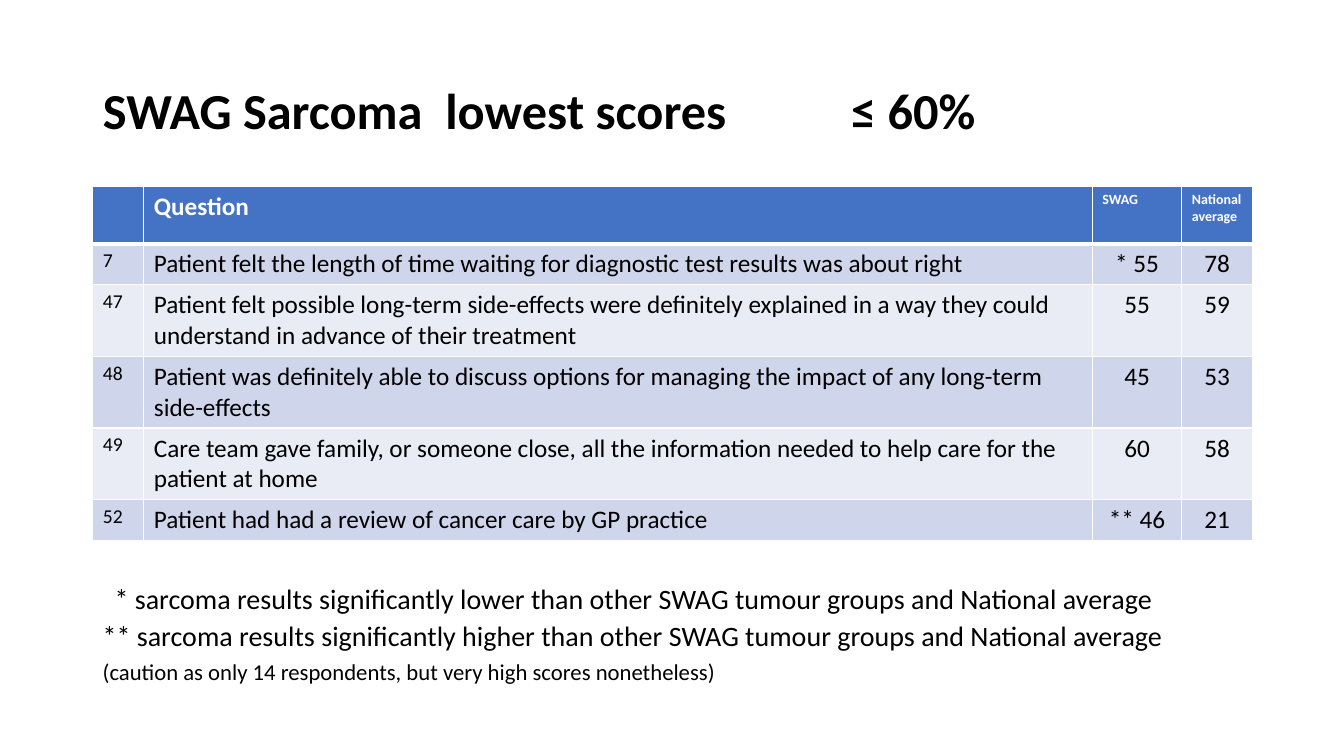
from dataclasses import dataclass

from lxml.etree import SubElement
from pptx import Presentation
from pptx.dml.color import RGBColor
from pptx.enum.text import MSO_ANCHOR, MSO_AUTO_SIZE, PP_ALIGN
from pptx.oxml.ns import qn
from pptx.util import Pt


@dataclass(frozen=True)
class Theme:
    """Colours, font and type sizes of the slide."""
    font: str = "Calibri"
    text: str = "000000"
    white: str = "FFFFFF"
    header: str = "4472C4"
    bands: tuple = ("CFD5EA", "E9EBF5")
    title_size: float = 36
    body_size: float = 18
    number_size: float = 14
    small_header_size: float = 10
    note_size: float = 20
    caution_size: float = 16.2


THEME = Theme()
LEFT, WIDTH = 66.24, 828
COLUMN_WIDTHS = (36.5, 677.5, 64, 50.4)
HEADER_HEIGHT, LINE_HEIGHT, CELL_PADDING = 41, 21.95, 7.2
HEADERS = ("", "Question", "SWAG", "National average")
SCORES = (
    ("7", "Patient felt the length of time waiting for diagnostic test results was about right", "* 55", "78", 1),
    ("47", "Patient felt possible long-term side-effects were definitely explained in a way "
           "they could understand in advance of their treatment", "55", "59", 2),
    ("48", "Patient was definitely able to discuss options for managing the impact of any "
           "long-term side-effects", "45", "53", 2),
    ("49", "Care team gave family, or someone close, all the information needed to help care "
           "for the patient at home", "60", "58", 2),
    ("52", "Patient had had a review of cancer care by GP practice", "** 46", "21", 1),
)
NOTES = (
    ("* sarcoma results significantly lower than other SWAG tumour groups and National average",
     THEME.note_size, 8.5),
    ("** sarcoma results significantly higher than other SWAG tumour groups and National average",
     THEME.note_size, 0),
    ("(caution as only 14 respondents, but very high scores nonetheless)", THEME.caution_size, 0),
)


def set_values(target, values):
    """Set each attribute of target from a dict."""
    for name, value in values.items():
        setattr(target, name, value)


def write_text(paragraph, text, size, color=THEME.text, bold=False, **formats):
    """Fill a paragraph with one formatted text."""
    paragraph.add_run().text = text
    set_values(paragraph, formats)
    for font in (paragraph.font, paragraph.runs[0].font):
        set_values(font, {"name": THEME.font, "size": Pt(size), "bold": bold})
        font.color.rgb = RGBColor.from_string(color)


def add_tab_stop(paragraph, position):
    """Give a paragraph one left tab stop."""
    tabs = SubElement(paragraph._p.get_or_add_pPr(), qn("a:tabLst"))
    SubElement(tabs, qn("a:tab"), pos=str(Pt(position)), algn="l")


def set_borders(cell, **widths):
    """Draw white borders of the given widths around a cell."""
    properties = cell._tc.get_or_add_tcPr()
    for side in "LRTB":
        line = SubElement(properties, qn(f"a:ln{side}"), w=str(Pt(widths.get(side, 1))))
        SubElement(SubElement(line, qn("a:solidFill")), qn("a:srgbClr"), val=THEME.white)


def write_cell(cell, text, size, fill, borders, **formats):
    """Fill, border and label a table cell."""
    set_borders(cell, **borders)
    cell.fill.solid()
    cell.fill.fore_color.rgb = RGBColor.from_string(fill)
    write_text(cell.text_frame.paragraphs[0], text, size, **formats)


def add_title(slide):
    """Place and format the title."""
    title = slide.shapes.title
    set_values(title, {"left": Pt(LEFT), "top": Pt(28.8), "width": Pt(WIDTH), "height": Pt(104.4)})
    set_values(title.text_frame, {"word_wrap": True, "auto_size": MSO_AUTO_SIZE.NONE,
                                  "vertical_anchor": MSO_ANCHOR.MIDDLE})
    paragraph = title.text_frame.paragraphs[0]
    add_tab_stop(paragraph, 534.5)
    write_text(paragraph, "SWAG Sarcoma  lowest scores\t≤ 60%", THEME.title_size, bold=True,
               alignment=PP_ALIGN.LEFT, line_spacing=0.9)


def add_score_table(slide):
    """Add the table of the lowest scores."""
    heights = [HEADER_HEIGHT] + [score[-1] * LINE_HEIGHT + CELL_PADDING for score in SCORES]
    table = slide.shapes.add_table(len(heights), len(COLUMN_WIDTHS), Pt(LEFT), Pt(133.2),
                                   Pt(WIDTH), Pt(sum(heights))).table
    for column, width in zip(table.columns, COLUMN_WIDTHS):
        column.width = Pt(width)
    for row, height in zip(table.rows, heights):
        row.height = Pt(height)
    for index, header in enumerate(HEADERS):
        size = THEME.body_size if index < 2 else THEME.small_header_size
        write_cell(table.cell(0, index), header, size, THEME.header, {"B": 3},
                   color=THEME.white, bold=True)
    for row_index, score in enumerate(SCORES, start=1):
        fill = THEME.bands[(row_index - 1) % 2]
        borders = {"T": 3} if row_index == 1 else {}
        for index, text in enumerate(score[:-1]):
            size = THEME.body_size if index else THEME.number_size
            alignment = PP_ALIGN.LEFT if index < 2 else PP_ALIGN.CENTER
            write_cell(table.cell(row_index, index), text, size, fill, borders, alignment=alignment)


def add_notes_box(slide):
    """Add the notes below the table."""
    frame = slide.shapes.add_textbox(Pt(LEFT), Pt(418.3), Pt(WIDTH), Pt(92.9)).text_frame
    frame.word_wrap = True
    for index, (text, size, indent) in enumerate(NOTES):
        paragraph = frame.add_paragraph() if index else frame.paragraphs[0]
        paragraph._p.get_or_add_pPr().set("marL", str(Pt(indent)))
        write_text(paragraph, text, size, line_spacing=0.7, space_before=Pt(10 if index else 0))


def main():
    """Build and save the slide."""
    presentation = Presentation()
    set_values(presentation, {"slide_width": Pt(960), "slide_height": Pt(540)})
    slide = presentation.slides.add_slide(presentation.slide_layouts[5])
    add_title(slide)
    add_score_table(slide)
    add_notes_box(slide)
    presentation.save("out.pptx")


if __name__ == "__main__":
    main()
